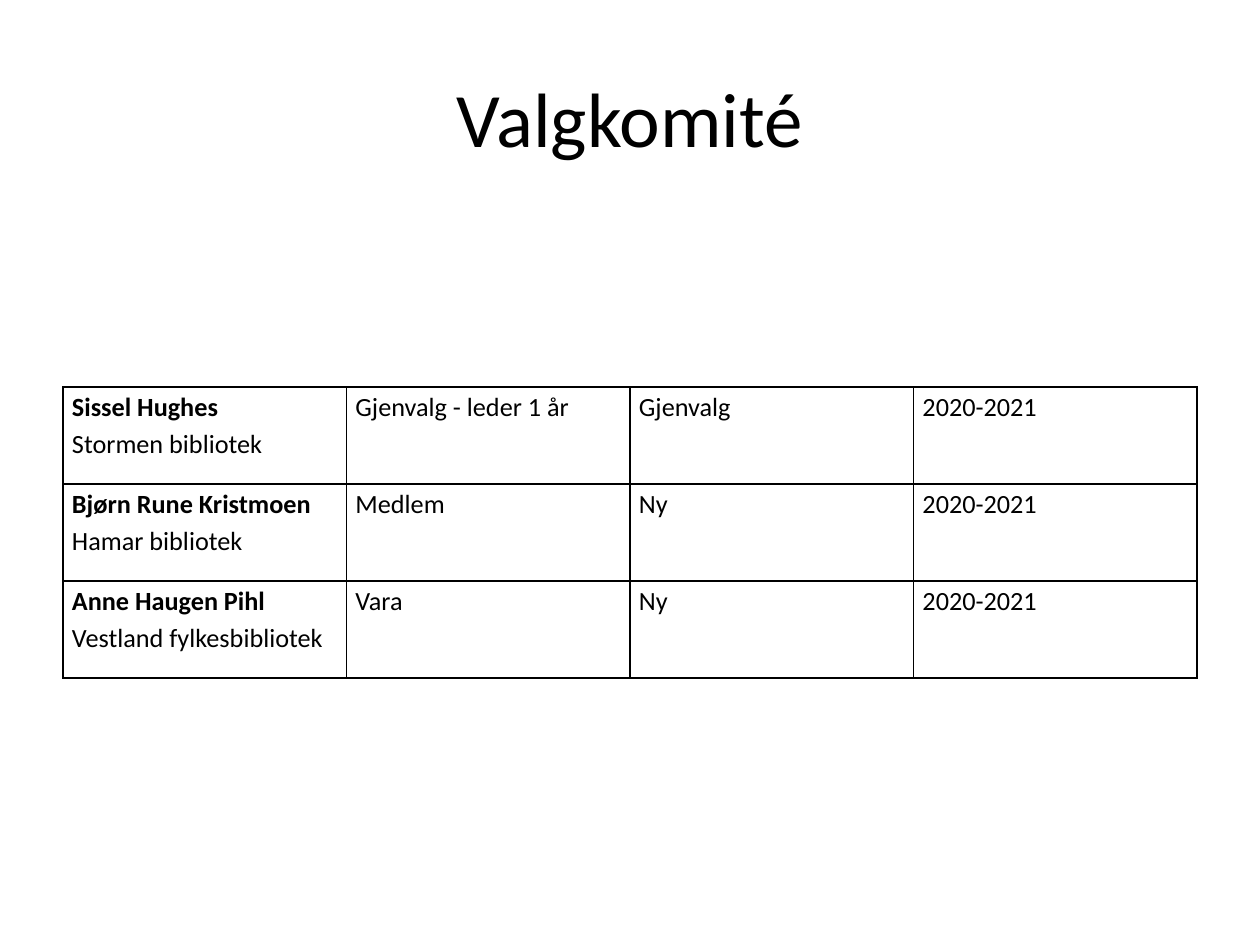
from lxml import etree
from pptx import Presentation
from pptx.dml.color import RGBColor
from pptx.enum.text import MSO_ANCHOR, PP_ALIGN
from pptx.oxml.ns import qn
from pptx.util import Emu, Pt

CENTER = PP_ALIGN.CENTER
TOP, MIDDLE = MSO_ANCHOR.TOP, MSO_ANCHOR.MIDDLE
FONT = "Calibri"
BLACK = "000000"
TITLE_ONLY = 5

MEMBERS = [
    (("Sissel Hughes", "Stormen bibliotek"), "Gjenvalg - leder 1 år", "Gjenvalg", "2020-2021"),
    (("Bjørn Rune Kristmoen", "Hamar bibliotek"), "Medlem", "Ny", "2020-2021"),
    (("Anne Haugen Pihl", "Vestland fylkesbibliotek"), "Vara", "Ny", "2020-2021"),
]


def px(n):
    return Emu(round(n * 914400 / 126))


def color(hex_code):
    return RGBColor.from_string(hex_code)


def style(p, size, bold=False):
    p.font.name = FONT
    p.font.size = Pt(size)
    p.font.bold = bold
    p.font.color.rgb = color(BLACK)


def add_borders(cell):
    tc_pr = cell._tc.get_or_add_tcPr()
    for side in ("a:lnL", "a:lnR", "a:lnT", "a:lnB"):
        ln = etree.SubElement(tc_pr, qn(side), w=str(Pt(1)))
        fill = etree.SubElement(ln, qn("a:solidFill"))
        etree.SubElement(fill, qn("a:srgbClr"), val=BLACK)


def fill_cell(cell, lines, bold_first):
    add_borders(cell)
    cell.fill.background()
    cell.margin_left = cell.margin_right = px(9)
    cell.margin_top = cell.margin_bottom = 0
    cell.vertical_anchor = TOP
    tf = cell.text_frame
    tf.text = "\n".join(lines)
    for i, p in enumerate(tf.paragraphs):
        p.line_spacing = 1.15
        style(p, 15, bold_first and i == 0)


def add_title(slide, x, y, w, h):
    sp = slide.shapes.title
    sp.left, sp.top, sp.width, sp.height = map(px, (x, y, w, h))
    tf = sp.text_frame
    tf.text = "Valgkomité"
    tf.vertical_anchor = MIDDLE
    p = tf.paragraphs[0]
    p.alignment = CENTER
    style(p, 44)


def add_members(slide, x, y, w, h):
    n_rows, n_cols = len(MEMBERS), len(MEMBERS[0])
    table = slide.shapes.add_table(n_rows, n_cols, *map(px, (x, y, w, h))).table
    table.first_row = table.horz_banding = False
    for col in table.columns:
        col.width = px(w / n_cols)
    for r, (name, *details) in enumerate(MEMBERS):
        table.rows[r].height = px(h / n_rows)
        fill_cell(table.cell(r, 0), name, True)
        for c, text in enumerate(details, 1):
            fill_cell(table.cell(r, c), [text], False)


def main():
    prs = Presentation()
    prs.slide_width, prs.slide_height = px(1260), px(945)
    slide = prs.slides.add_slide(prs.slide_layouts[TITLE_ONLY])
    add_title(slide, 63, 38, 1134, 157)
    add_members(slide, 63, 387, 1134, 291)
    prs.save("out.pptx")


if __name__ == "__main__":
    main()
